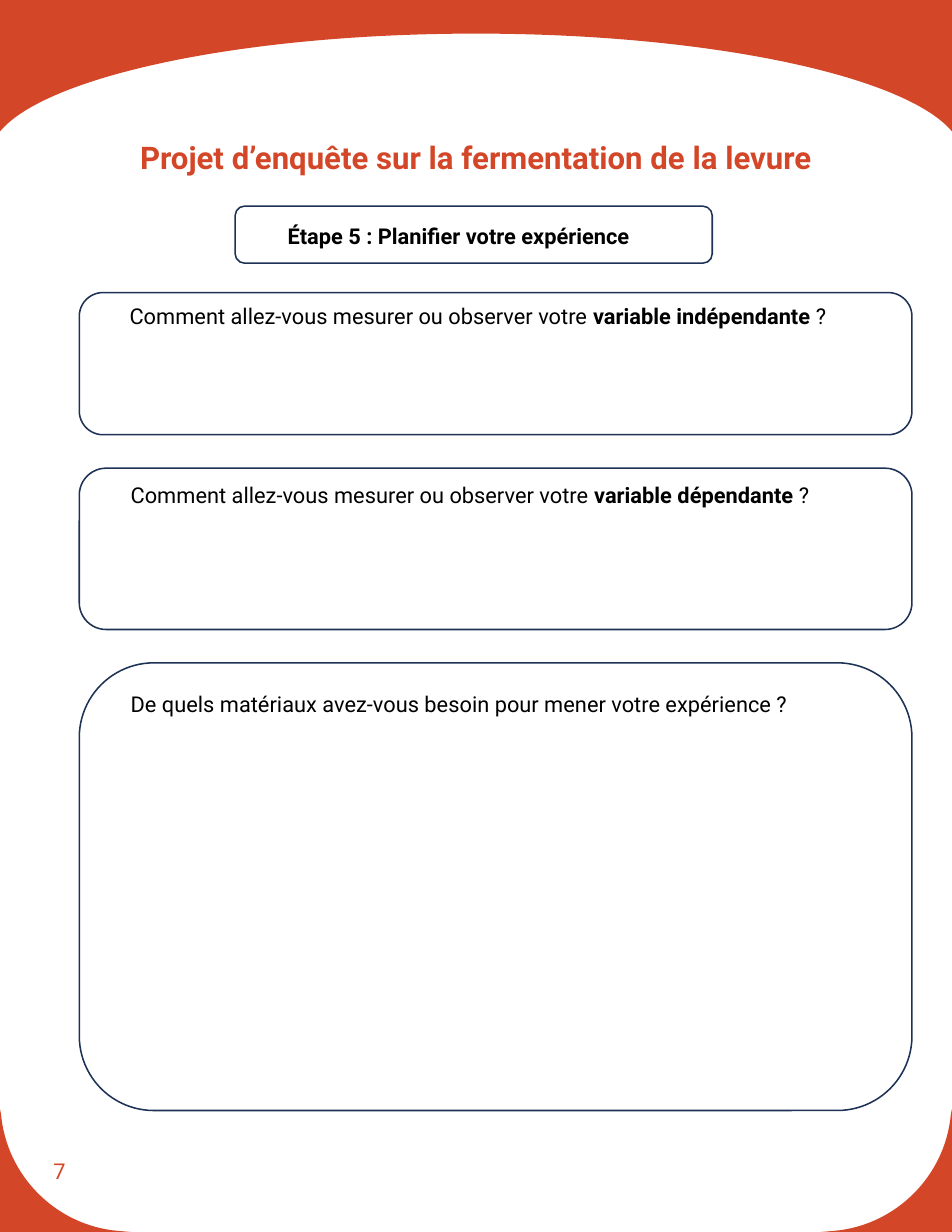
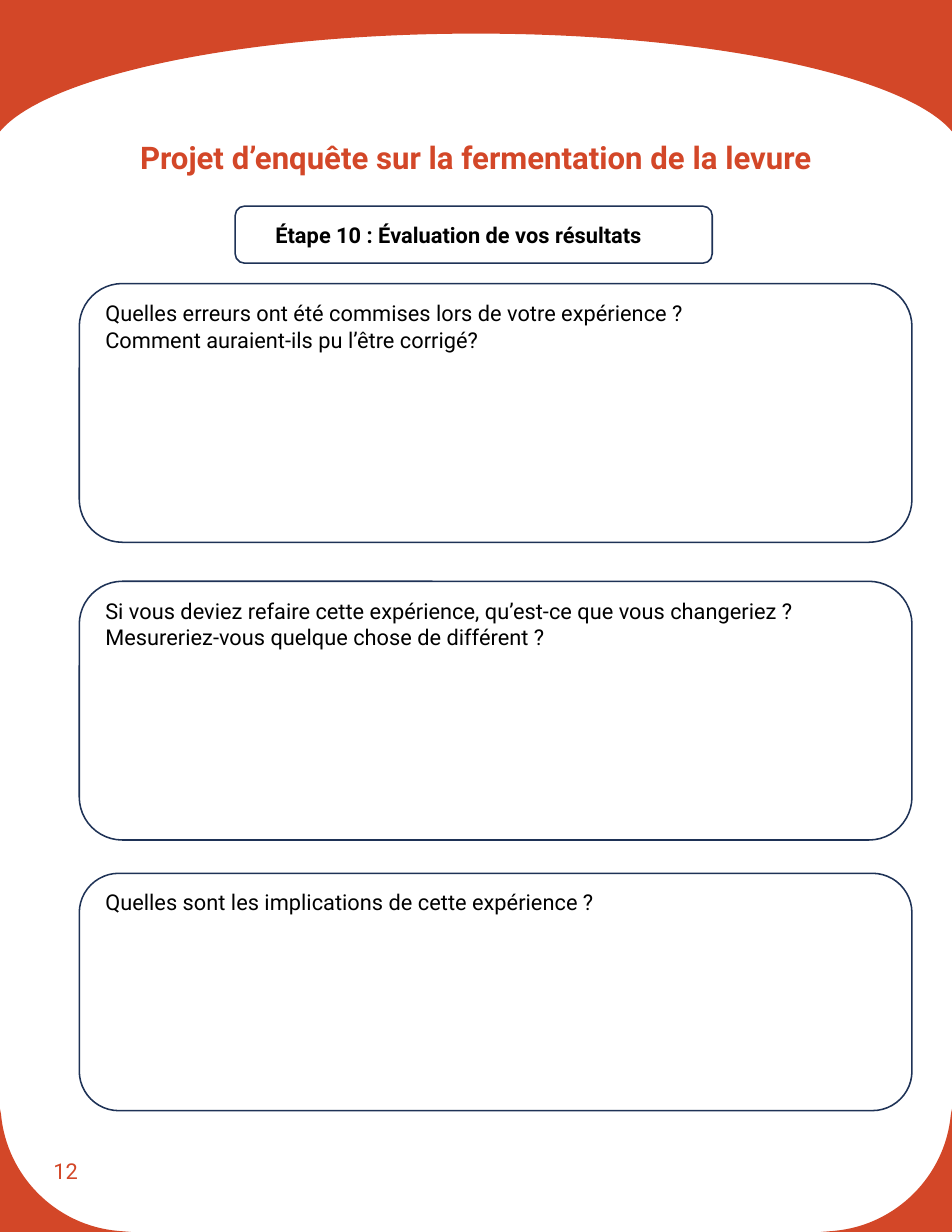
from lxml.etree import SubElement
from pptx import Presentation
from pptx.dml.color import RGBColor
from pptx.enum.shapes import MSO_SHAPE
from pptx.enum.text import MSO_ANCHOR, MSO_AUTO_SIZE, PP_ALIGN
from pptx.oxml.ns import qn
from pptx.util import Pt

COLORS = {"band": "D34728", "outline": "1E3256", "text": "000000"}
FONT = "Roboto"
W, H = 612, 792
PANEL_X, PANEL_W = 51, 535.3
TITLE = "Projet d’enquête sur la fermentation de la levure"

PAGES = [
    {
        "number": "7",
        "step": ("Étape 5 : Planifier votre expérience", 26.6, 7.2),
        "panels": [
            (188.1, 91.4, 25.2, 3.2, 509.8, [[("Comment allez-vous mesurer ou observer votre ", False),
                                              ("variable indépendante ", True), ("?", False)]]),
            (301, 103.7, 25.9, 5, 509.8, [[("Comment allez-vous mesurer ou observer votre ", False),
                                           ("variable dépendante ", True), ("?", False)]]),
            (426.1, 287.8, 25.9, 14.4, 509.8,
             [[("De quels matériaux avez-vous besoin pour mener votre expérience ?", False)]]),
        ],
    },
    {
        "number": "12",
        "step": ("Étape 10 : Évaluation de vos résultats", 18.8, 6.5),
        "panels": [
            (182.3, 166.3, 9.6, 7.1, 425.5,
             [[("Quelles erreurs ont été commises lors de votre expérience ?", False)],
              [("Comment auraient-ils pu l’être corrigé?", False)]]),
            (373.7, 166.3, 9.6, 7.2, 503.3,
             [[("Si vous deviez refaire cette expérience, qu’est-ce que vous changeriez ?\v"
                "Mesureriez-vous quelque chose de différent ?", False)]]),
            (561.4, 152.6, 9.6, 6.7, 354.2,
             [[("Quelles sont les implications de cette expérience ?", False)]]),
        ],
    },
]


def rgb(name):
    """Return a palette colour."""
    return RGBColor.from_string(COLORS[name])


def write(tf, paragraphs, size=14, color="text", align=PP_ALIGN.LEFT, anchor=MSO_ANCHOR.TOP, spacing=1.0,
          fit=MSO_AUTO_SIZE.NONE):
    """Fill a text frame with paragraphs made of (text, bold) runs."""
    tf.word_wrap = True
    tf.auto_size = fit
    tf.vertical_anchor = anchor
    for i, runs in enumerate(paragraphs):
        p = tf.paragraphs[0] if i == 0 else tf.add_paragraph()
        p.alignment, p.line_spacing, p.space_before = align, spacing, Pt(0)
        for text, bold in runs:
            for j, line in enumerate(text.split("\v")):
                if j:
                    p.add_line_break()
                r = p.add_run()
                r.text = line
                r.font.name, r.font.size, r.font.bold = FONT, Pt(size), bold
                r.font.color.rgb = rgb(color)


def add_text(shapes, x, y, w, h, paragraphs, **fmt):
    """Add a text box holding the given paragraphs."""
    box = shapes.add_textbox(Pt(x), Pt(y), Pt(w), Pt(h))
    write(box.text_frame, paragraphs, **fmt)


def mirror(points):
    """Reflect points across the vertical centre of the page."""
    return [(W - x, y) for x, y in points]


def add_band(s, points, curves):
    """Draw a filled outline whose listed segment indexes start cubic curves."""
    pts = [(Pt(x), Pt(y)) for x, y in points]
    fb = s.shapes.build_freeform(*pts[0], scale=1.0)
    fb.add_line_segments(pts[1:], close=True)
    sp = fb.convert_to_shape()
    lines = list(sp.element.iter(qn("a:lnTo")))
    for i in curves:
        curve = SubElement(lines[i].getparent(), qn("a:cubicBezTo"))
        lines[i].addprevious(curve)
        for line in lines[i:i + 3]:
            curve.append(line[0])
            line.getparent().remove(line)
    sp.shadow.inherit = False
    sp.fill.solid()
    sp.fill.fore_color.rgb = rgb("band")
    sp.line.fill.background()
    return sp


def add_frame(s):
    """Draw the top arch and the two bottom corners on the slide's layout."""
    arch = [(W, 84.5), (582.5, 49), (456.5, 21.6), (W / 2, 21.6)]
    top = [(0, 0), (W, 0)] + arch + mirror(arch)[-2::-1]
    corner = [(0, 712.8), (0.7, 716.4), (4.3, 756), (36, 787.7), (75.6, 791.3), (84.2, H), (0, H)]
    bands = [add_band(s, top, (2, 5)), add_band(s, corner, (1,)), add_band(s, mirror(corner), (1,))]
    for i, sp in enumerate(bands):
        sp.element.nvSpPr.cNvPr.set("id", str(101 + i))
        s.slide_layout.shapes.element.append(sp.element)


def add_card(s, x, y, w, h, dx, dy, text_w, paragraphs):
    """Group a rounded outline with text offset from its top left."""
    shapes = s.shapes.add_group_shape().shapes
    sp = shapes.add_shape(MSO_SHAPE.ROUNDED_RECTANGLE, Pt(x), Pt(y), Pt(w), Pt(h))
    sp.shadow.inherit = False
    sp.fill.background()
    sp.line.color.rgb = rgb("outline")
    sp.line.width = Pt(1)
    breaks = sum(text.count("\v") for runs in paragraphs for text, _ in runs)
    text_h = 24.5 + 16.5 * (len(paragraphs) - 1 + breaks)
    add_text(shapes, x + dx, y + dy, text_w, text_h, paragraphs, fit=MSO_AUTO_SIZE.SHAPE_TO_FIT_TEXT)


def add_title(s):
    """Place and format the worksheet title."""
    sp = s.shapes.title
    sp.left, sp.top, sp.width, sp.height = Pt(25.6), Pt(78), Pt(560.9), Pt(61.9)
    write(sp.text_frame, [[(TITLE, True)]], size=20, color="band", align=PP_ALIGN.CENTER, spacing=1.3)


def add_page(prs, number, step, panels):
    """Build one worksheet page."""
    s = prs.slides.add_slide(prs.slide_layouts[5])
    if len(prs.slides) == 1:
        add_frame(s)
    add_text(s.shapes, 27.2, 731.5, 137.5, 42.5, [[(number, False)]], color="band", anchor=MSO_ANCHOR.MIDDLE)
    add_title(s)
    label, dx, dy = step
    add_card(s, 151.2, 132.5, 306.7, 36.7, dx, dy, 297.4, [[(label, True)]])
    for y, h, dx, dy, text_w, paragraphs in panels:
        add_card(s, PANEL_X, y, PANEL_W, h, dx, dy, text_w, paragraphs)


def main():
    """Create the deck and save it."""
    prs = Presentation()
    prs.slide_width, prs.slide_height = Pt(W), Pt(H)
    for page in PAGES:
        add_page(prs, **page)
    prs.save("out.pptx")


if __name__ == "__main__":
    main()
